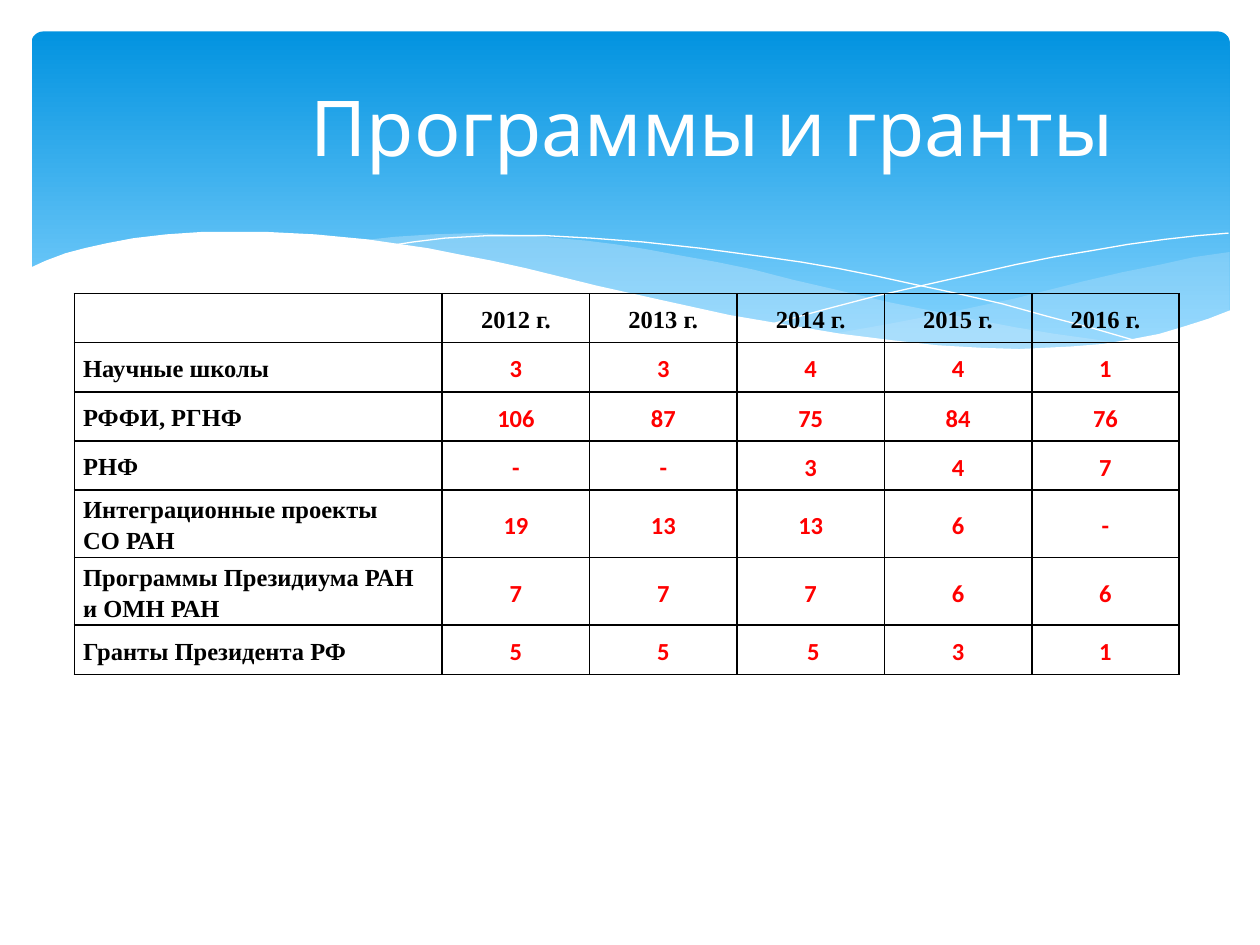
from lxml import etree
from pptx import Presentation
from pptx.dml.color import RGBColor
from pptx.enum.shapes import MSO_SHAPE
from pptx.enum.text import MSO_ANCHOR, PP_ALIGN
from pptx.oxml.ns import qn
from pptx.util import Inches, Pt

ROUND = MSO_SHAPE.ROUNDED_RECTANGLE
MIDDLE = MSO_ANCHOR.MIDDLE
LEFT, CENTER = PP_ALIGN.LEFT, PP_ALIGN.CENTER

WHITE = RGBColor(0xFF, 0xFF, 0xFF)
BLACK = RGBColor(0, 0, 0)
RED = RGBColor(0xFF, 0, 0)
DEEP = RGBColor(0x02, 0x93, 0xE0)
SKY = RGBColor(0x83, 0xD3, 0xFE)
PALE = RGBColor(0xC6, 0xE7, 0xFC)

# Wave outlines, in inches
RIGHT_WAVE = [
    (9.76, 2), (9.48, 2.04), (9.21, 2.1), (8.91, 2.16), (8.61, 2.23),
    (8.05, 2.37), (7.53, 2.48), (7.06, 2.57), (6.61, 2.65), (6.91, 2.69),
    (7.19, 2.72), (7.45, 2.75), (7.69, 2.77), (8.03, 2.78), (8.35, 2.77),
    (8.63, 2.75), (8.89, 2.72), (9.13, 2.67), (9.35, 2.62), (9.49, 2.57),
    (9.63, 2.52), (9.76, 2.47)]
MID_WAVE = [
    (8.93, 2.73), (8.66, 2.69), (8.37, 2.65), (8.07, 2.6), (7.75, 2.54),
    (7.41, 2.47), (7.06, 2.4), (6.68, 2.31), (6.29, 2.22), (5.98, 2.14),
    (5.69, 2.08), (5.41, 2.03), (5.14, 1.98), (4.89, 1.94), (4.65, 1.91),
    (4.42, 1.89), (4.2, 1.87), (3.8, 1.85), (3.44, 1.86), (3.13, 1.88),
    (2.86, 1.91), (3.23, 1.96), (3.62, 2.03), (4.04, 2.11), (4.49, 2.22),
    (4.91, 2.32), (5.3, 2.4), (5.66, 2.48), (6.01, 2.55), (6.34, 2.61),
    (6.65, 2.66), (6.95, 2.7), (7.22, 2.74), (7.48, 2.76), (7.73, 2.77),
    (8.07, 2.78), (8.38, 2.78), (8.67, 2.76)]
FALL_LINE = [
    (3.09, 1.95), (3.28, 1.92), (3.53, 1.89), (3.87, 1.87), (4.33, 1.87),
    (4.69, 1.89), (5.1, 1.92), (5.56, 1.97), (6.08, 2.04), (6.36, 2.08),
    (6.65, 2.13), (6.95, 2.19), (7.27, 2.26), (7.6, 2.33), (7.95, 2.41),
    (8.31, 2.51), (8.69, 2.61), (9.07, 2.72)]
RISE_LINE = [
    (6.13, 2.57), (6.53, 2.46), (6.95, 2.35), (7.48, 2.23), (8.06, 2.1),
    (8.36, 2.04), (8.66, 1.99), (8.95, 1.94), (9.24, 1.9), (9.51, 1.87),
    (9.75, 1.85)]
FRONT_WAVE = [
    (9.77, 2.46), (9.59, 2.53), (9.4, 2.59), (9.2, 2.65), (8.99, 2.69),
    (8.75, 2.73), (8.5, 2.75), (8.09, 2.77), (7.78, 2.76), (7.44, 2.74),
    (7.08, 2.7), (6.68, 2.65), (6.26, 2.58), (5.79, 2.5), (5.29, 2.39),
    (4.75, 2.27), (4.18, 2.13), (3.91, 2.07), (3.65, 2.02), (3.4, 1.97),
    (2.92, 1.9), (2.5, 1.86), (2.11, 1.84), (1.61, 1.84), (1.32, 1.86),
    (1.06, 1.89), (0.85, 1.93), (0.67, 1.97), (0.52, 2.01), (0.36, 2.07),
    (0.23, 2.13), (0.23, 3.29), (9.77, 3.29)]

ROWS = [
    ["", "2012 г.", "2013 г.", "2014 г.", "2015 г.", "2016 г."],
    ["Научные школы", "3", "3", "4", "4", "1"],
    ["РФФИ, РГНФ", "106", "87", "75", "84", "76"],
    ["РНФ", "-", "-", "3", "4", "7"],
    ["Интеграционные проекты\nСО РАН", "19", "13", "13", "6", "-"],
    ["Программы Президиума РАН и ОМН РАН", "7", "7", "7", "6", "6"],
    ["Гранты Президента РФ", "5", "5", " 5", "3", "1"],
]


def add_band(slide):
    band = slide.shapes.add_shape(
        ROUND, Inches(0.25), Inches(0.25), Inches(9.51), Inches(2.7))
    band.adjustments[0] = 0.034
    band.shadow.inherit = False
    band.line.fill.background()
    band.fill.gradient()
    band.fill.gradient_angle = 270
    for stop, color, pos in zip(band.fill.gradient_stops, (DEEP, SKY), (0, 0.9)):
        stop.color.rgb = color
        stop.position = pos


def add_path(slide, points, closed):
    (x, y), *rest = [(Inches(x), Inches(y)) for x, y in points]
    pen = slide.shapes.build_freeform(x, y)
    pen.add_line_segments(rest, close=closed)
    shape = pen.convert_to_shape()
    shape.shadow.inherit = False
    return shape


def add_wave(slide, points, color, alpha=100):
    wave = add_path(slide, points, True)
    wave.line.fill.background()
    wave.fill.solid()
    wave.fill.fore_color.rgb = color
    if alpha < 100:
        tint = wave.fill._xPr.find(qn("a:solidFill"))[0]
        etree.SubElement(tint, qn("a:alpha"), val=str(alpha * 1000))


def add_curve(slide, points):
    curve = add_path(slide, points, False)
    curve.fill.background()
    curve.line.color.rgb = WHITE
    curve.line.width = Pt(0)


def style(para, size, face, color, align, bold=False):
    para.alignment = align
    font = para.font
    font.size, font.name, font.bold = Pt(size), face, bold
    font.color.rgb = color


def add_title(slide, text):
    box = slide.shapes.add_textbox(
        Inches(1.93), Inches(0.33), Inches(7.45), Inches(1.33))
    frame = box.text_frame
    frame.word_wrap = True
    frame.vertical_anchor = MIDDLE
    frame.text = text
    style(frame.paragraphs[0], 44, "Cabin", WHITE, CENTER)


def set_edges(cell):
    props = cell._tc.get_or_add_tcPr()
    for at, side in enumerate(("lnL", "lnR", "lnT", "lnB")):
        edge = etree.Element(qn(f"a:{side}"), w=str(Pt(1)))
        fill = etree.SubElement(edge, qn("a:solidFill"))
        etree.SubElement(fill, qn("a:srgbClr"), val=str(BLACK))
        props.insert(at, edge)


def fill_cell(cell, text, face, color, align):
    cell.text = text
    cell.vertical_anchor = MIDDLE
    cell.margin_left = cell.margin_right = Inches(0.07)
    cell.margin_top = cell.margin_bottom = 0
    cell.fill.background()
    set_edges(cell)
    for para in cell.text_frame.paragraphs:
        para.line_spacing = 1.15
        style(para, 14, face, color, align, True)


def add_grid(slide):
    high = Inches(0.39)
    grid = slide.shapes.add_table(
        len(ROWS), len(ROWS[0]), Inches(0.59), Inches(2.33),
        Inches(8.77), high * len(ROWS)).table
    grid.first_row = grid.horz_banding = False
    for c, col in enumerate(grid.columns):
        col.width = Inches(1.17 if c else 2.92)
    for r, row in enumerate(ROWS):
        grid.rows[r].height = high
        for c, text in enumerate(row):
            face, color = ("Calibri", RED) if r and c else ("Times New Roman", BLACK)
            fill_cell(grid.cell(r, c), text, face, color, CENTER if c else LEFT)


def main():
    deck = Presentation()
    deck.slide_width, deck.slide_height = Inches(10), Inches(7.5)
    slide = deck.slides.add_slide(deck.slide_layouts[6])

    # Header band with waves
    add_band(slide)
    add_wave(slide, RIGHT_WAVE, PALE, 29)
    add_wave(slide, MID_WAVE, PALE, 40)
    add_curve(slide, FALL_LINE)
    add_curve(slide, RISE_LINE)
    add_wave(slide, FRONT_WAVE, WHITE)

    # Title and table
    add_title(slide, "Программы и гранты")
    add_grid(slide)
    deck.save("out.pptx")


if __name__ == "__main__":
    main()
